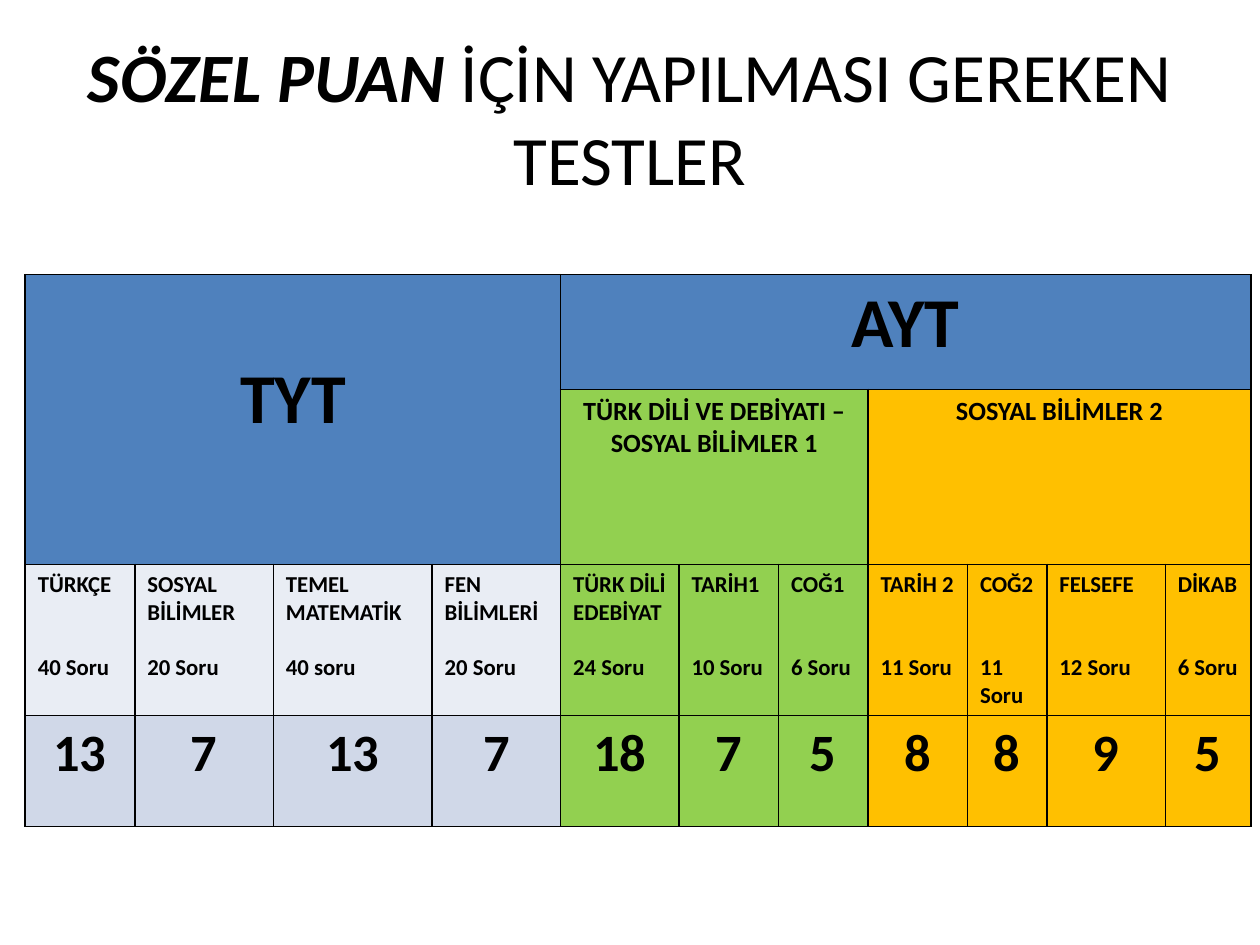
from dataclasses import dataclass

from lxml.etree import SubElement
from pptx import Presentation
from pptx.dml.color import RGBColor
from pptx.enum.text import MSO_ANCHOR, PP_ALIGN
from pptx.oxml.ns import qn
from pptx.util import Inches, Pt


@dataclass(frozen=True)
class Theme:
    font: str = "Calibri"
    ink: str = "000000"
    blue: str = "4F81BD"
    green: str = "92D050"
    amber: str = "FFC000"
    pale: str = "E9EDF4"
    pale_dark: str = "D0D8E8"
    title: float = 39.6
    exam: float = 40
    group: float = 15
    subject: float = 13
    count: float = 30
    line_height: float = 1.22


@dataclass(frozen=True)
class Subject:
    name: str
    questions: str
    target: int
    width: float
    fill: str
    target_fill: str
    name_lines: int = 1


@dataclass(frozen=True)
class Header:
    text: str
    first: tuple[int, int]
    last: tuple[int, int]
    fill: str
    size: float
    top: float = 0.05


T = Theme()
TYT, SOS1, SOS2 = (T.pale, T.pale_dark), (T.green, T.green), (T.amber, T.amber)
SUBJECTS = [
    Subject("TÜRKÇE", "40 Soru", 13, 0.87, *TYT),
    Subject("SOSYAL BİLİMLER", "20 Soru", 7, 1.1, *TYT, name_lines=2),
    Subject("TEMEL MATEMATİK", "40 soru", 13, 1.26, *TYT, name_lines=2),
    Subject("FEN BİLİMLERİ", "20 Soru", 7, 1.02, *TYT, name_lines=2),
    Subject("TÜRK DİLİ EDEBİYAT", "24 Soru", 18, 0.94, *SOS1, name_lines=2),
    Subject("TARİH1", "10 Soru", 7, 0.79, *SOS1),
    Subject("COĞ1", "6 Soru", 5, 0.71, *SOS1),
    Subject("TARİH 2", "11 Soru", 8, 0.79, *SOS2),
    Subject("COĞ2", "11 Soru", 8, 0.63, *SOS2),
    Subject("FELSEFE", "12 Soru", 9, 0.94, *SOS2),
    Subject("DİKAB", "6 Soru", 5, 0.68, *SOS2),
]
HEADERS = [
    Header("TYT", (0, 0), (1, 3), T.blue, T.exam, top=0.65),
    Header("AYT", (0, 4), (0, 10), T.blue, T.exam),
    Header("TÜRK DİLİ VE DEBİYATI – SOSYAL BİLİMLER 1", (1, 4), (1, 6), T.green, T.group),
    Header("SOSYAL BİLİMLER 2", (1, 7), (1, 10), T.amber, T.group),
]
ROW_HEIGHTS = [0.91, 1.39, 1.2, 0.88]


def add_text(p, text: str, *, size: float, bold=True, italic=False,
             align=PP_ALIGN.CENTER, before: float = 0) -> None:
    p.alignment = align
    p.space_before = Pt(before)
    r = p.add_run()
    r.text = text
    r.font.name, r.font.size = T.font, Pt(size)
    r.font.bold, r.font.italic = bold, italic
    r.font.color.rgb = RGBColor.from_string(T.ink)


def style_cell(cell, fill: str) -> None:
    """Draw the four borders, then fill the cell."""
    tc_pr = cell._tc.get_or_add_tcPr()
    for side in ("lnL", "lnR", "lnT", "lnB"):
        ln = SubElement(tc_pr, qn(f"a:{side}"), w=str(Pt(1)))
        SubElement(SubElement(ln, qn("a:solidFill")), qn("a:srgbClr"), val=T.ink)
    cell.fill.solid()
    cell.fill.fore_color.rgb = RGBColor.from_string(fill)


def add_title(s) -> None:
    tf = s.shapes.add_textbox(Inches(0.5), Inches(0.3), Inches(9), Inches(1.25)).text_frame
    tf.word_wrap = True
    tf.vertical_anchor = MSO_ANCHOR.MIDDLE
    p = tf.paragraphs[0]
    add_text(p, "SÖZEL PUAN", size=T.title, italic=True)
    add_text(p, " İÇİN YAPILMASI GEREKEN TESTLER", size=T.title, bold=False)


def add_header(table, h: Header) -> None:
    for row in range(h.first[0], h.last[0] + 1):
        for col in range(h.first[1], h.last[1] + 1):
            style_cell(table.cell(row, col), h.fill)
    cell = table.cell(*h.first)
    cell.merge(table.cell(*h.last))
    cell.margin_top = Inches(h.top)
    add_text(cell.text_frame.paragraphs[0], h.text, size=h.size)


def add_subject(table, col: int, subject: Subject) -> None:
    table.columns[col].width = Inches(subject.width)
    cell, target = table.cell(2, col), table.cell(3, col)
    style_cell(cell, subject.fill)
    style_cell(target, subject.target_fill)
    tf = cell.text_frame
    add_text(tf.paragraphs[0], subject.name, size=T.subject, align=PP_ALIGN.LEFT)
    # question counts share the fourth line of every cell
    gap = (3 - subject.name_lines) * T.subject * T.line_height
    add_text(tf.add_paragraph(), subject.questions, size=T.subject,
             align=PP_ALIGN.LEFT, before=gap)
    add_text(target.text_frame.paragraphs[0], str(subject.target), size=T.count)


def add_score_table(s) -> None:
    width = sum(subject.width for subject in SUBJECTS)
    table = s.shapes.add_table(len(ROW_HEIGHTS), len(SUBJECTS), Inches(0.2), Inches(2.18),
                               Inches(width), Inches(sum(ROW_HEIGHTS))).table
    table.first_row = table.horz_banding = False
    for row, height in zip(table.rows, ROW_HEIGHTS):
        row.height = Inches(height)
    for h in HEADERS:
        add_header(table, h)
    for col, subject in enumerate(SUBJECTS):
        add_subject(table, col, subject)


def main() -> None:
    prs = Presentation()
    prs.slide_width, prs.slide_height = Inches(10), Inches(7.5)
    s = prs.slides.add_slide(prs.slide_layouts[6])
    add_title(s)
    add_score_table(s)
    prs.save("out.pptx")


if __name__ == "__main__":
    main()
